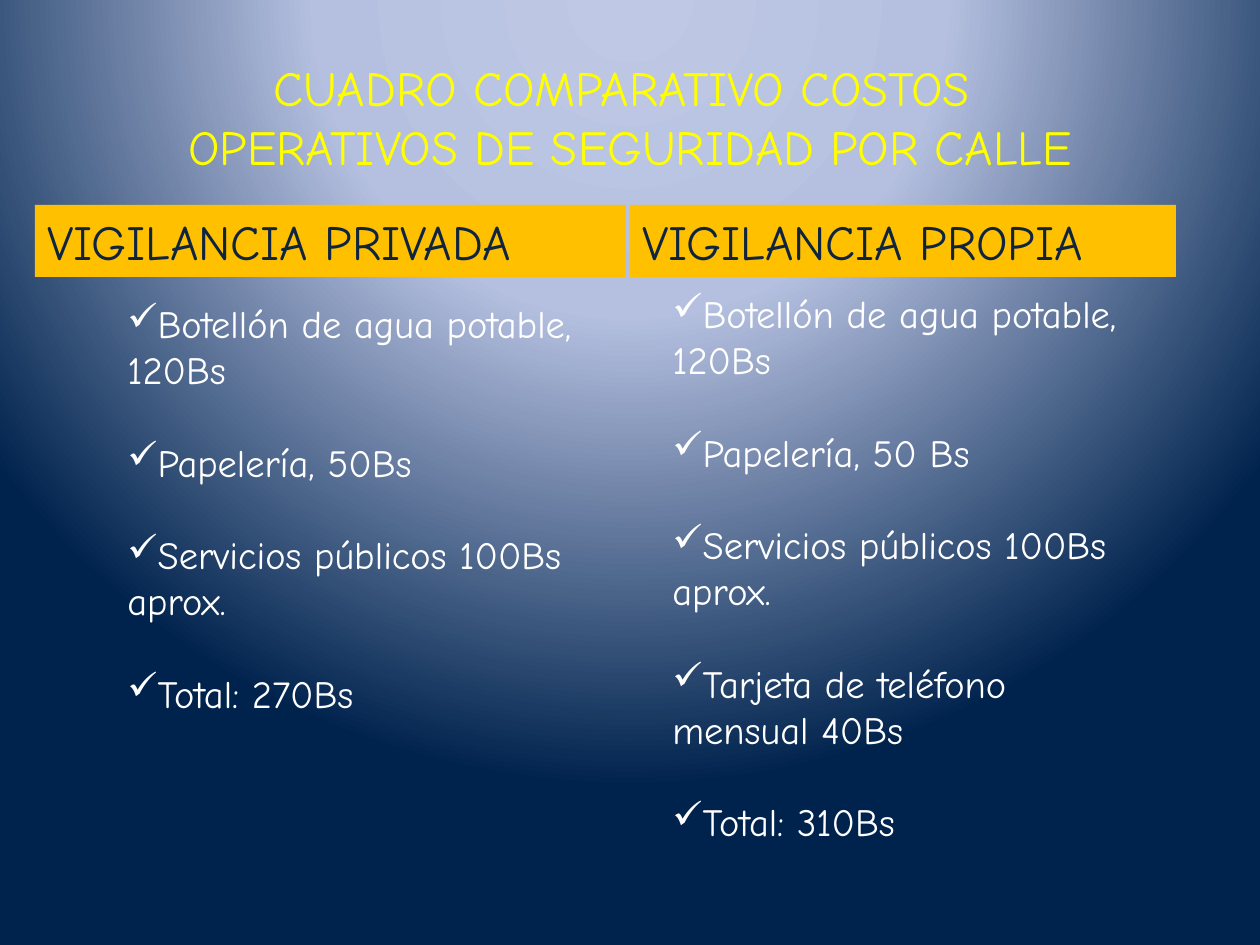
from lxml import etree
from pptx import Presentation
from pptx import util as u
from pptx.dml.color import RGBColor
from pptx.enum import shapes, text
from pptx.oxml.ns import qn

PX = u.Inches(1) // 126
FONT = "Comic Neue"
YELLOW, AMBER, NAVY, WHITE = "FFFF00", "FFC000", "0F243E", "FFFFFF"
BACKGROUND_STOPS = [(0, "BFC9E5"), (40, "B5C0E0"), (100, "00234D")]
BACKGROUND_FOCUS = {"l": 50, "t": -80, "r": 50, "b": 180}

TITLE = ["CUADRO COMPARATIVO COSTOS ", "OPERATIVOS DE SEGURIDAD POR CALLE"]
TITLE_BOX = (63, 38, 1134, 157)
HEADING_SIZE, ITEM_SIZE = 28, 22
ITEM_GAP = 26.4  # one line of item text, in points

COLUMNS = [
    {
        "heading": "VIGILANCIA PRIVADA",
        "heading_box": (35, 205, 591, 72),
        "items": ["Botellón de agua potable, 120Bs", "Papelería, 50Bs",
                  "Servicios públicos 100Bs aprox.", "Total: 270Bs"],
        "items_box": (115, 294, 476, 432),
    },
    {
        "heading": "VIGILANCIA PROPIA",
        "heading_box": (630, 205, 546, 72),
        "items": ["Botellón de agua potable, 120Bs", "Papelería, 50 Bs",
                  "Servicios públicos 100Bs aprox.",
                  "Tarjeta de teléfono mensual 40Bs", "Total: 310Bs"],
        "items_box": (660, 284, 476, 567),
    },
]


def color(value):
    return RGBColor.from_string(value)


def scaled(box):
    return [length * PX for length in box]


def add_run(paragraph, words, size, ink):
    run = paragraph.add_run()
    run.text = words
    run.font.name = FONT
    run.font.size = u.Pt(size)
    run.font.color.rgb = color(ink)


def paint_background(slide):
    """Fill the background with a circular gradient centred above the slide."""
    fill = slide.background.fill
    fill.gradient()
    gradient = slide.background._cSld.find(".//" + qn("a:gradFill"))
    for child in list(gradient):
        gradient.remove(child)
    stops = etree.SubElement(gradient, qn("a:gsLst"))
    for position, value in BACKGROUND_STOPS:
        stop = etree.SubElement(stops, qn("a:gs"), pos=str(position * 1000))
        etree.SubElement(stop, qn("a:srgbClr"), val=value)
    path = etree.SubElement(gradient, qn("a:path"), path="circle")
    focus = {side: str(percent * 1000) for side, percent in BACKGROUND_FOCUS.items()}
    etree.SubElement(path, qn("a:fillToRect"), focus)


def add_title(slide):
    frame = slide.shapes.add_textbox(*scaled(TITLE_BOX)).text_frame
    frame.word_wrap = True
    frame.vertical_anchor = text.MSO_ANCHOR.MIDDLE
    paragraph = frame.paragraphs[0]
    paragraph.alignment = text.PP_ALIGN.CENTER
    for index, line in enumerate(TITLE):
        if index:
            paragraph.add_line_break()
        add_run(paragraph, line, HEADING_SIZE, YELLOW)


def add_heading(slide, words, box):
    shape = slide.shapes.add_shape(shapes.MSO_SHAPE.RECTANGLE, *scaled(box))
    shape.shadow.inherit = False
    shape.fill.solid()
    shape.fill.fore_color.rgb = color(AMBER)
    shape.line.fill.background()
    frame = shape.text_frame
    frame.word_wrap = True
    frame.vertical_anchor = text.MSO_ANCHOR.TOP
    paragraph = frame.paragraphs[0]
    paragraph.alignment = text.PP_ALIGN.LEFT
    add_run(paragraph, words, HEADING_SIZE, NAVY)


def add_items(slide, items, box):
    frame = slide.shapes.add_textbox(*scaled(box)).text_frame
    frame.word_wrap = True
    for index, item in enumerate(items):
        paragraph = frame.add_paragraph() if index else frame.paragraphs[0]
        if index:
            paragraph.space_before = u.Pt(ITEM_GAP)
        properties = paragraph._p.get_or_add_pPr()
        etree.SubElement(properties, qn("a:buChar"), char="✓")
        add_run(paragraph, item, ITEM_SIZE, WHITE)


def main():
    presentation = Presentation()
    presentation.slide_width, presentation.slide_height = u.Inches(10), u.Inches(7.5)
    slide = presentation.slides.add_slide(presentation.slide_layouts[6])
    paint_background(slide)
    add_title(slide)
    for column in COLUMNS:
        add_heading(slide, column["heading"], column["heading_box"])
    for column in COLUMNS:
        add_items(slide, column["items"], column["items_box"])
    presentation.save("out.pptx")


if __name__ == "__main__":
    main()
